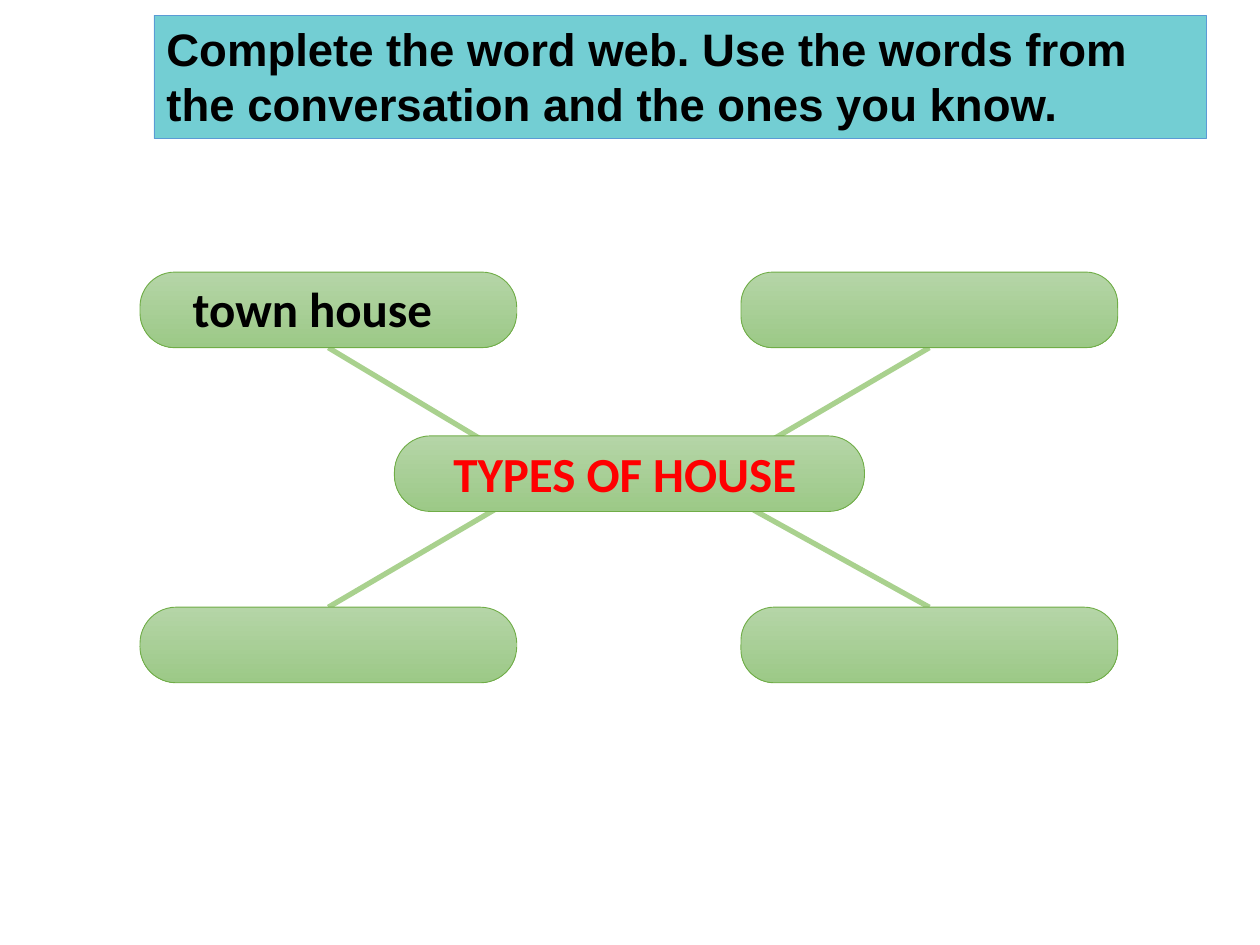
"""Build a word web slide about types of house."""
import dataclasses

import lxml.etree
import pptx
import pptx.dml.color
import pptx.enum.dml
import pptx.enum.shapes
import pptx.enum.text
import pptx.oxml
import pptx.oxml.ns
import pptx.util

Pt = pptx.util.Pt


@dataclasses.dataclass(frozen=True)
class Theme:
    """Colours, fonts and sizes of the slide."""
    banner_fill: str = "73CED3"
    banner_line: str = "5B9BD5"
    bubble_top: str = "B5D5A7"
    bubble_bottom: str = "9CC987"
    bubble_line: str = "70AD47"
    spoke: str = "A9D18E"
    ink: str = "000000"
    topic: str = "FF0000"
    text_glow: str = "FFFFFF"
    heading_font: str = "Arial"
    body_font: str = "Calibri"
    heading_size: float = 26
    body_size: float = 28
    outline_width: float = 0.5
    spoke_width: float = 3


@dataclasses.dataclass(frozen=True)
class Box:
    """A rectangle in points."""
    left: float
    top: float
    width: float
    height: float

    def lengths(self) -> list:
        """Return the four lengths for a shape call."""
        return [Pt(n) for n in (self.left, self.top, self.width, self.height)]


@dataclasses.dataclass(frozen=True)
class Branch:
    """An outer bubble and where its spoke meets the hub."""
    box: Box
    rounding: float
    hub_x: float


THEME = Theme()
BUBBLE_WIDTH, BUBBLE_HEIGHT = 215.3, 43.2
LEFT, RIGHT, UPPER, LOWER = 80, 423.4, 155.5, 347
HUB = Box(225.4, 249.1, 268.6, BUBBLE_HEIGHT)
HUB_ROUNDING = 0.48
HUB_UPPER_END, HUB_LOWER_END = 256.3, 289.4
BRANCHES = [
    Branch(Box(left, top, BUBBLE_WIDTH, BUBBLE_HEIGHT), rounding, hub_x)
    for left, top, rounding, hub_x in (
        (LEFT, UPPER, 0.46, 283.7),
        (RIGHT, UPPER, 0.42, 432.7),
        (LEFT, LOWER, 0.48, 285.8),
        (RIGHT, LOWER, 0.44, 427),
    )
]


def rgb(value: str) -> pptx.dml.color.RGBColor:
    """Turn a hex string into a colour."""
    return pptx.dml.color.RGBColor.from_string(value)


def write(shape, words: str, font_name: str, size: float, colour: str):
    """Put bold left-aligned words in a shape and return the run."""
    frame = shape.text_frame
    frame.text = words
    frame.word_wrap = True
    frame.auto_size = pptx.enum.text.MSO_AUTO_SIZE.SHAPE_TO_FIT_TEXT
    frame.vertical_anchor = pptx.enum.text.MSO_ANCHOR.TOP
    paragraph = frame.paragraphs[0]
    paragraph.alignment = pptx.enum.text.PP_ALIGN.LEFT
    run = paragraph.runs[0]
    run.font.size = Pt(size)
    run.font.bold = True
    run.font.color.rgb = rgb(colour)
    run.font.name = font_name
    return run


def add_text_shadow(run, colour: str) -> None:
    """Give a run a soft shadow."""
    effects = pptx.oxml.parse_xml(
        f'<a:effectLst {pptx.oxml.ns.nsdecls("a")}>'
        '<a:outerShdw blurRad="38100" dist="38100" dir="2700000" algn="tl">'
        f'<a:srgbClr val="{colour}"/></a:outerShdw></a:effectLst>')
    run.font.fill.solid()
    run.font.color.rgb = rgb(THEME.ink)
    fill = run.font._element.find(pptx.oxml.ns.qn("a:solidFill"))
    fill.addnext(effects)


def outline(shape, colour: str) -> None:
    """Set a thin outline and no shadow."""
    shape.shadow.inherit = False
    shape.line.color.rgb = rgb(colour)
    shape.line.width = Pt(THEME.outline_width)


def add_banner(slide, box: Box, words: str) -> None:
    """Draw the task heading."""
    banner = slide.shapes.add_shape(
        pptx.enum.shapes.MSO_SHAPE.RECTANGLE, *box.lengths())
    outline(banner, THEME.banner_line)
    banner.fill.solid()
    banner.fill.fore_color.rgb = rgb(THEME.banner_fill)
    heading = write(banner, words, THEME.heading_font, THEME.heading_size, THEME.ink)
    add_text_shadow(heading, THEME.text_glow)


def add_bubble(slide, box: Box, rounding: float) -> None:
    """Draw one rounded bubble of the web."""
    bubble = slide.shapes.add_shape(
        pptx.enum.shapes.MSO_SHAPE.ROUNDED_RECTANGLE, *box.lengths())
    bubble.adjustments[0] = rounding
    outline(bubble, THEME.bubble_line)
    bubble.fill.gradient()
    bubble.fill.gradient_angle = 270
    colours = (THEME.bubble_top, THEME.bubble_bottom)
    for position, (stop, colour) in enumerate(zip(bubble.fill.gradient_stops, colours)):
        stop.position = position
        stop.color.rgb = rgb(colour)


def add_spoke(slide, branch: Branch) -> None:
    """Join a branch bubble to the hub."""
    box = branch.box
    is_upper = box.top < HUB.top
    edge = box.top + box.height if is_upper else box.top
    hub_y = HUB_UPPER_END if is_upper else HUB_LOWER_END
    spoke = slide.shapes.add_connector(
        pptx.enum.shapes.MSO_CONNECTOR.STRAIGHT,
        Pt(box.left + box.width / 2), Pt(edge), Pt(branch.hub_x), Pt(hub_y))
    spoke.line.color.rgb = rgb(THEME.spoke)
    spoke.line.width = Pt(THEME.spoke_width)
    lxml.etree.SubElement(spoke._element.spPr, pptx.oxml.ns.qn("a:effectLst"))


def add_label(slide, box: Box, words: str, colour: str) -> None:
    """Draw the words over a bubble."""
    label = slide.shapes.add_textbox(*box.lengths())
    write(label, words, THEME.body_font, THEME.body_size, colour)


def main() -> None:
    """Build and save the slide."""
    deck = pptx.Presentation()
    deck.slide_width, deck.slide_height = Pt(720), Pt(540)
    slide = deck.slides.add_slide(deck.slide_layouts[6])
    for branch in BRANCHES:
        add_spoke(slide, branch)
    add_banner(slide, Box(88, 8.6, 601.2, 70.6),
               "Complete the word web. Use the words from the conversation "
               "and the ones you know.")
    for branch in BRANCHES:
        add_bubble(slide, branch.box, branch.rounding)
    add_bubble(slide, HUB, HUB_ROUNDING)
    add_label(slide, Box(103, 155.5, 183, 41), "town house", THEME.ink)
    add_label(slide, Box(252, 249.8, 216, 41), "TYPES OF HOUSE", THEME.topic)
    deck.save("out.pptx")


if __name__ == "__main__":
    main()
